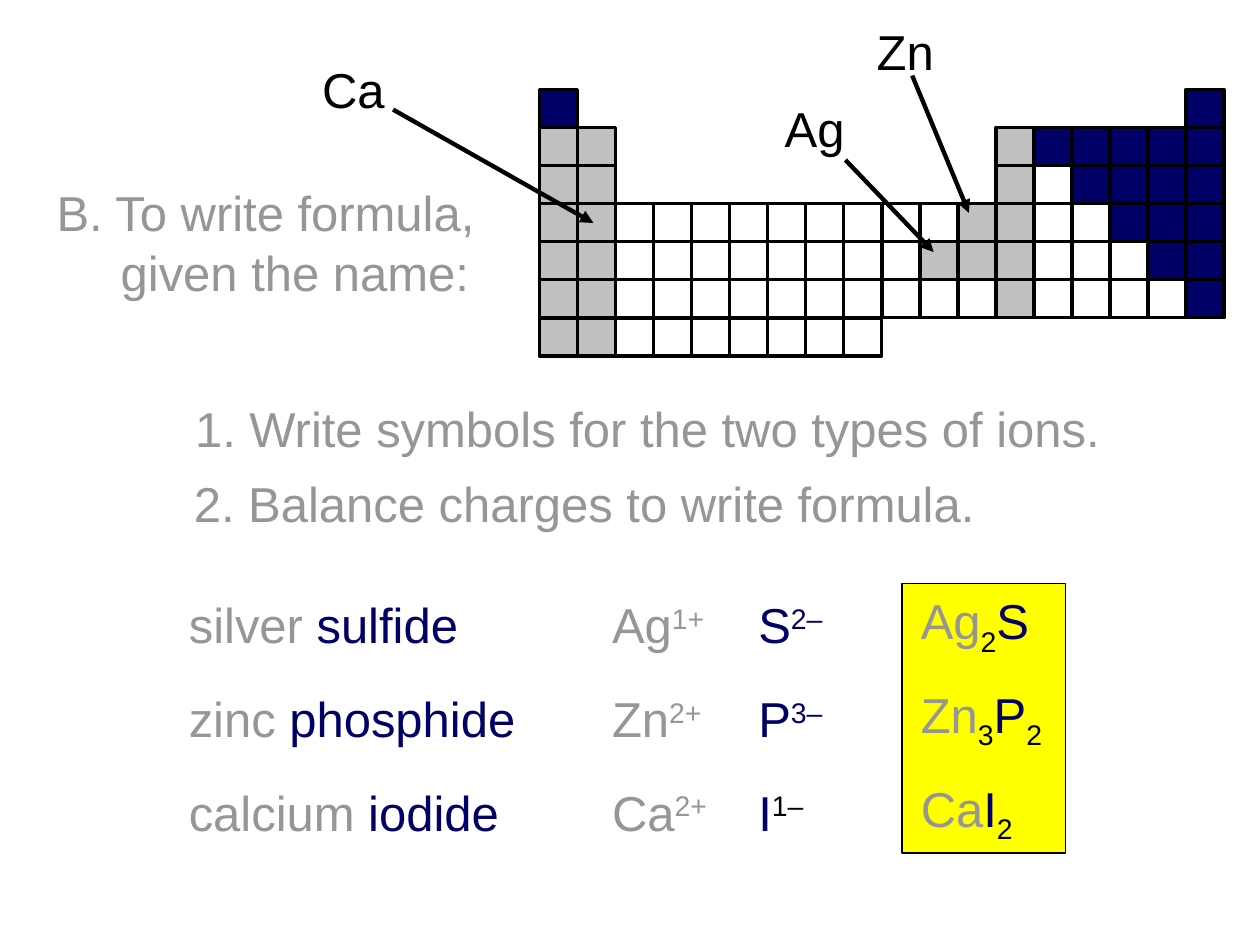
from dataclasses import dataclass

from lxml import etree
from pptx import Presentation
from pptx.dml.color import RGBColor
from pptx.enum.shapes import MSO_CONNECTOR, MSO_SHAPE
from pptx.enum.text import MSO_ANCHOR, MSO_AUTO_SIZE, PP_ALIGN
from pptx.oxml.ns import qn
from pptx.util import Inches, Pt

RECTANGLE = MSO_SHAPE.RECTANGLE
STRAIGHT = MSO_CONNECTOR.STRAIGHT
MIDDLE = MSO_ANCHOR.MIDDLE
GROW = MSO_AUTO_SIZE.SHAPE_TO_FIT_TEXT
LEFT, CENTER = PP_ALIGN.LEFT, PP_ALIGN.CENTER

SLIDE_W, SLIDE_H = Inches(10), Inches(7.5)


@dataclass(frozen=True)
class Theme:
    metal: RGBColor = RGBColor(0x96, 0x96, 0x96)
    nonmetal: RGBColor = RGBColor(0x00, 0x00, 0x66)
    ink: RGBColor = RGBColor(0x00, 0x00, 0x00)
    metal_cell: RGBColor = RGBColor(0xC0, 0xC0, 0xC0)
    answer: RGBColor = RGBColor(0xFF, 0xFF, 0x00)
    font: str = "Arial"
    size: Pt = Pt(28)
    cell_line: Pt = Pt(2)
    arrow_line: Pt = Pt(2.5)
    answer_line: Pt = Pt(0.75)


THEME = Theme()
METAL, NONMETAL, INK = THEME.metal, THEME.nonmetal, THEME.ink
SUPER, SUB = 30, -25  # baseline shift in percent

# Periodic table: M fixed-charge metal, N nonmetal, o other element, . gap
PERIODS = [
    "N................N",
    "MM..........MNNNNN",
    "MM..........MoNNNN",
    "MMoooooooooMMooNNN",
    "MMooooooooMMMoooNN",
    "MMooooooooooMooooN",
    "MMooooooo.........",
]
CELL_FILLS = {"M": THEME.metal_cell, "N": NONMETAL, "o": None}
TABLE_LEFT, TABLE_TOP, CELL = 42.8, 9.47, 3.02

# Text lines: left, top, width (percent of the slide), wording
HEADING = [
    (3.5, 18.67, 36.8, "B. To write formula,"),
    (8.6, 24.93, 29.7, "given the name:"),
]
STEPS = [
    (14.5, 41.47, 74, "1. Write symbols for the two types of ions."),
    (14.4, 49.47, 64.1, "2. Balance charges to write formula."),
]
TEXT_HEIGHT = 7.6

# Callouts: symbol, label left and top, arrow start, arrow end
CALLOUTS = [
    ("Ca", (24.3, 5.6), (31.2, 11.6), (47.1, 23.6)),
    ("Ag", (60.9, 9.73), (67.1, 16.93), (74.1, 26.67)),
    ("Zn", (68.1, 1.6), (72.4, 8), (76.9, 22.53)),
]
CALLOUT_WIDTH = 7.5

# Examples: name, cation, anion and formula, each a width and its runs
EXAMPLE_COLUMNS = (14, 47.6, 59.2, 72.1)
EXAMPLE_TOP, EXAMPLE_PITCH = 62.27, 9.93
EXAMPLES = [
    [(23.5, [("silver ", METAL), ("sulfide", NONMETAL)]),
     (10.9, [("Ag", METAL), ("1+", METAL, SUPER)]),
     (8.6, [("S", NONMETAL), ("2–", NONMETAL, SUPER)]),
     (11.9, [("Ag", METAL), ("2", INK, SUB), ("S", NONMETAL)])],
    [(32, [("zinc ", METAL), ("phosphide", NONMETAL)]),
     (10.7, [("Zn", METAL), ("2+", METAL, SUPER)]),
     (8.6, [("P", NONMETAL), ("3–", NONMETAL, SUPER)]),
     (13.2, [("Zn", METAL), ("3", INK, SUB), ("P", NONMETAL), ("2", INK, SUB)])],
    [(26.7, [("calcium ", METAL), ("iodide", NONMETAL)]),
     (11.1, [("Ca", METAL), ("2+", METAL, SUPER)]),
     (7.1, [("I", NONMETAL), ("1–", INK, SUPER)]),
     (10.6, [("Ca", METAL), ("I", NONMETAL), ("2", INK, SUB)])],
]


def across(share):
    return round(SLIDE_W * share / 100)


def down(share):
    return round(SLIDE_H * share / 100)


def add_box(shapes, left, top, width, height, fill, line_width):
    box = shapes.add_shape(RECTANGLE, left, top, width, height)
    box.shadow.inherit = False
    if fill is None:
        box.fill.background()
    else:
        box.fill.solid()
        box.fill.fore_color.rgb = fill
    box.line.color.rgb = INK
    box.line.width = line_width


def add_text(shapes, left, top, width, runs, align=LEFT, wrap=False):
    label = shapes.add_textbox(across(left), down(top), across(width), down(TEXT_HEIGHT))
    frame = label.text_frame
    frame.word_wrap = wrap
    frame.auto_size = GROW
    frame.vertical_anchor = MIDDLE
    paragraph = frame.paragraphs[0]
    paragraph.alignment = align
    paragraph.font.name = THEME.font
    paragraph.font.size = THEME.size
    for wording, color, *shift in runs:
        run = paragraph.add_run()
        run.text = wording
        run.font.color.rgb = color
        if shift:
            run._r.get_or_add_rPr().set("baseline", str(shift[0] * 1000))


def add_arrow(shapes, start, end):
    arrow = shapes.add_connector(STRAIGHT, across(start[0]), down(start[1]),
                                 across(end[0]), down(end[1]))
    arrow.line.color.rgb = INK
    arrow.line.width = THEME.arrow_line
    etree.SubElement(arrow.line._get_or_add_ln(), qn("a:tailEnd"), type="triangle")
    etree.SubElement(arrow._element.spPr, qn("a:effectLst"))


def add_periodic_table(shapes):
    cells = shapes.add_group_shape().shapes
    side = across(CELL)
    for row, period in enumerate(PERIODS):
        for column, kind in enumerate(period):
            if kind != ".":
                add_box(cells, across(TABLE_LEFT) + column * side,
                        down(TABLE_TOP) + row * side, side, side,
                        CELL_FILLS[kind], THEME.cell_line)


def add_callout(shapes, symbol, corner, start, end):
    callout = shapes.add_group_shape().shapes
    add_arrow(callout, start, end)
    add_text(callout, *corner, CALLOUT_WIDTH, [(symbol, INK)], CENTER, wrap=True)


def main():
    deck = Presentation()
    deck.slide_width, deck.slide_height = SLIDE_W, SLIDE_H
    shapes = deck.slides.add_slide(deck.slide_layouts[6]).shapes

    # Answer panel behind the formulas
    add_box(shapes, across(71.6), down(61.73), across(13), down(28.53),
            THEME.answer, THEME.answer_line)

    # Steps and heading
    heading = shapes.add_group_shape().shapes
    for parent, lines in ((shapes, STEPS), (heading, HEADING)):
        for left, top, width, wording in lines:
            add_text(parent, left, top, width, [(wording, METAL)])

    add_periodic_table(shapes)

    # Worked examples
    for row, example in enumerate(EXAMPLES):
        for left, (width, runs) in zip(EXAMPLE_COLUMNS, example):
            add_text(shapes, left, EXAMPLE_TOP + row * EXAMPLE_PITCH, width, runs)

    # Element callouts
    for callout in CALLOUTS:
        add_callout(shapes, *callout)

    deck.save("out.pptx")


if __name__ == "__main__":
    main()
